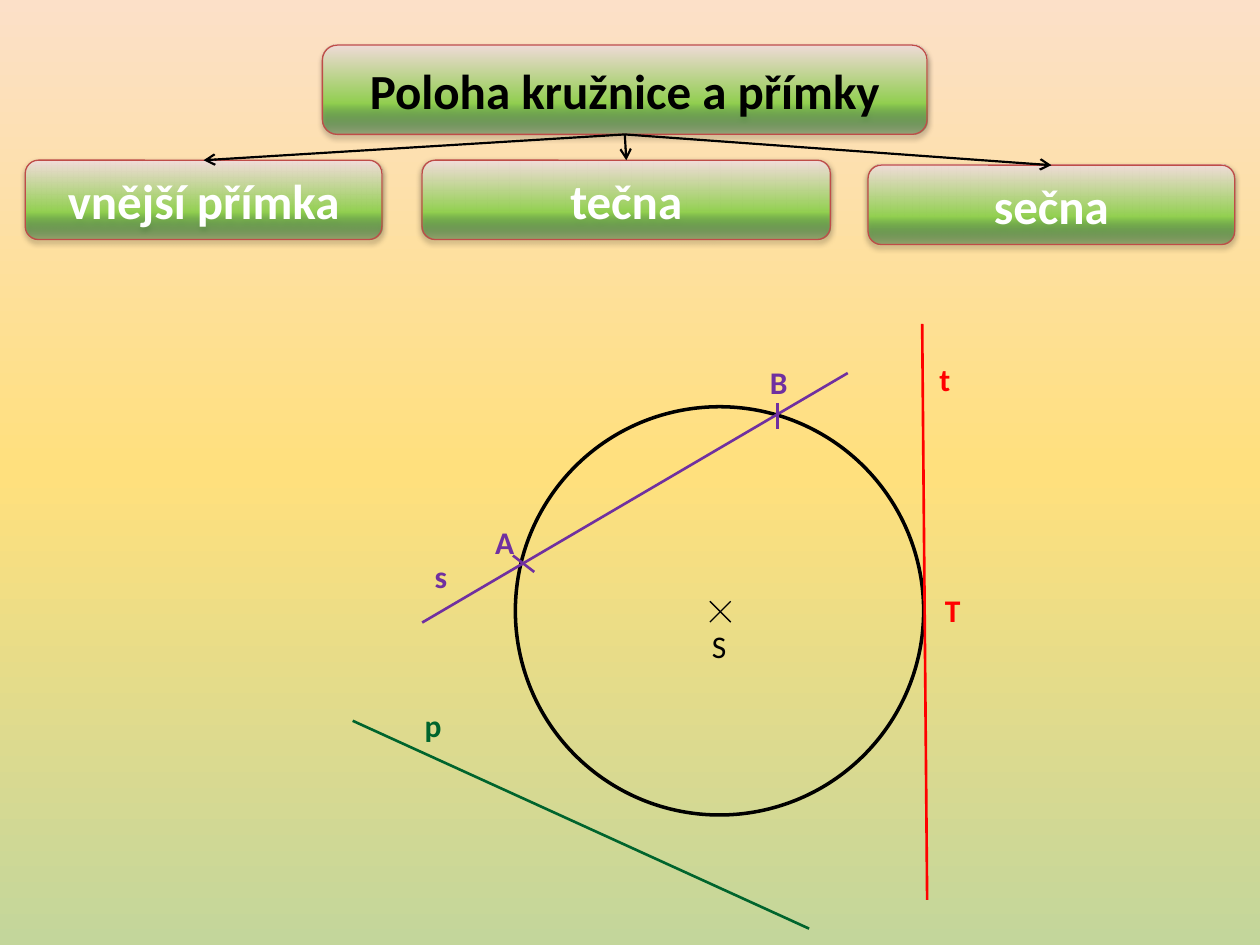
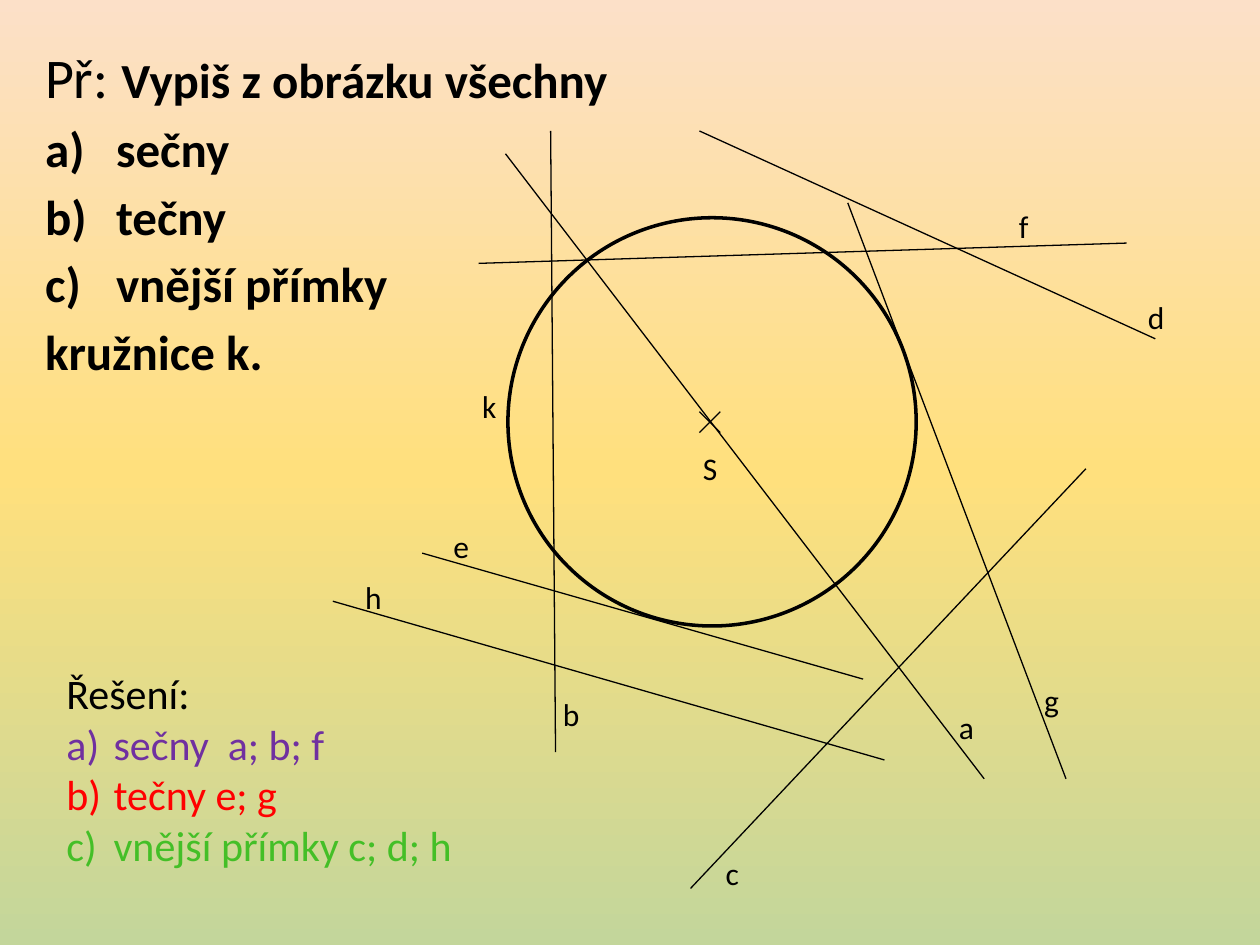
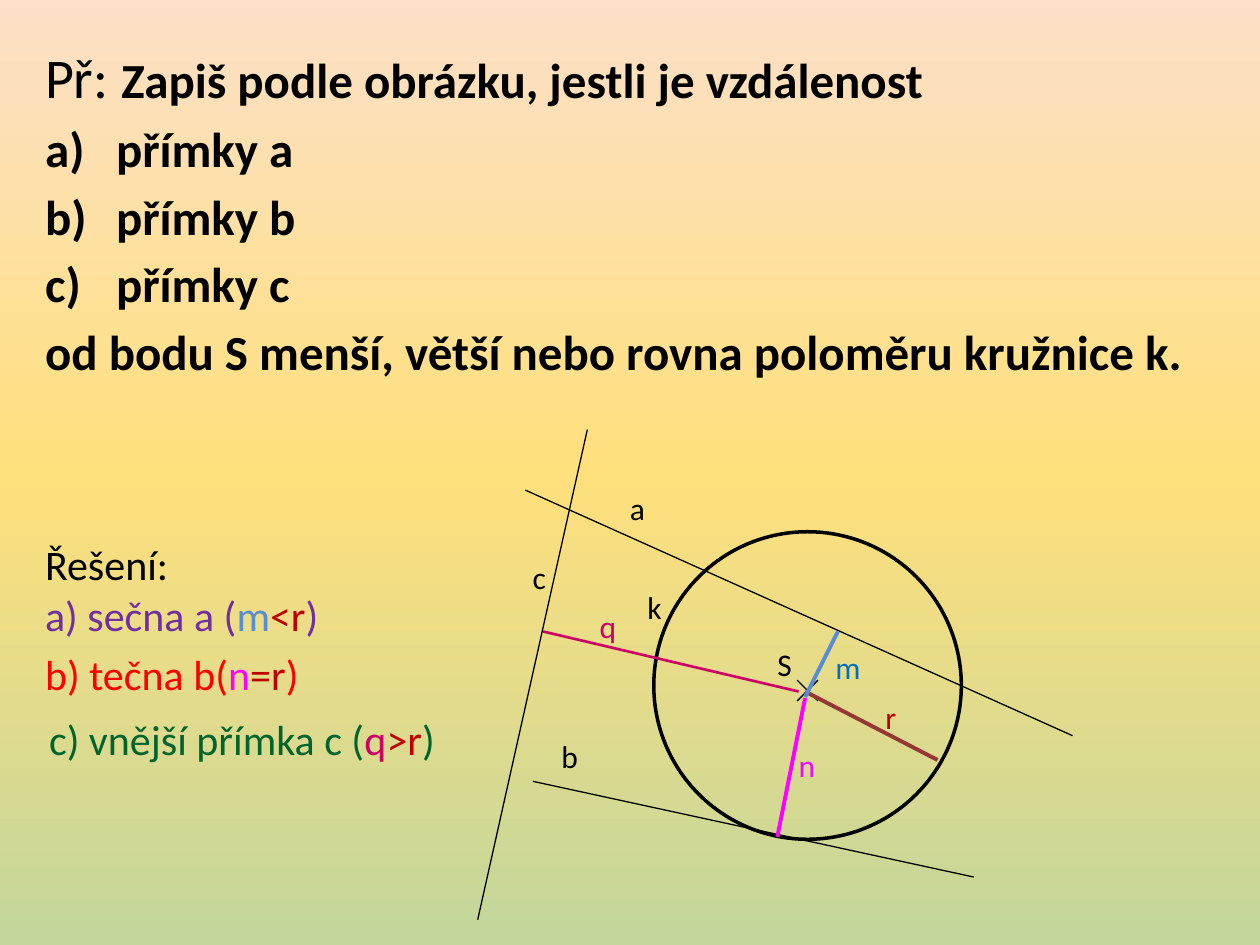
from pptx import Presentation
from pptx import util as u
from pptx.dml.color import RGBColor
from pptx.enum import shapes, text
from pptx.oxml import parse_xml
from pptx.oxml.ns import nsdecls, qn


class Theme:
    font = "Calibri"
    black, white, edge = "000000", "FFFFFF", "BF4C48"
    violet, red, dark_green, lime = "7030A0", "FF0000", "00642D", "44BF27"
    crimson, brown, sky, blue = "C00000", "953735", "558ED5", "0070C0"
    magenta, pink = "FF00FF", "CC0066"
    heading, strong, answer, label = 32, 28, 24, 18
    thin, arrow, medium, circle, thick = 0.75, 1.25, 1.5, 2, 2.25
    page_stops = [(0, "FCE0C8", 100), (50, "FFE07D", 100), (100, "C3D69B", 100)]
    button_stops = [(0, "00642D", 29), (35, "92D050", 100), (100, "F2DCDB", 100)]
    label_height = 1.02
    label_widths = {
        "A": 0.89, "B": 0.89, "S": 0.81, "T": 0.81, "a": 0.81, "b": 0.86, "c": 0.79,
        "d": 0.86, "e": 0.84, "f": 0.71, "g": 0.81, "h": 0.86, "k": 0.84, "m": 1.02,
        "n": 0.86, "p": 0.86, "q": 0.86, "r": 0.74, "s": 0.76, "t": 0.74,
    }


def rgb(code):
    return RGBColor.from_string(code)


def drawing(tag, attributes="", inner=""):
    return parse_xml(f"<a:{tag} {nsdecls('a')} {attributes}>{inner}</a:{tag}>")


def color_xml(code, opacity):
    return f'<a:srgbClr val="{code}"><a:alpha val="{opacity * 1000}"/></a:srgbClr>'


def paint_gradient(fill, holder, stops, angle):
    fill.gradient()
    fill.gradient_angle = angle
    stop_list = next(holder.iter(qn("a:gsLst")))
    stop_list.clear()
    for position, code, opacity in stops:
        stop_list.append(drawing("gs", f'pos="{position * 1000}"', color_xml(code, opacity)))


class Lesson:
    def __init__(self, theme):
        self.theme = theme
        self.deck = Presentation()
        self.deck.slide_width, self.deck.slide_height = u.Cm(25.4), u.Cm(19.05)
        master = self.deck.slide_master
        paint_gradient(master.background.fill, master.element, theme.page_stops, 270)
        self.page = None

    def new_page(self):
        self.page = self.deck.slides.add_slide(self.deck.slide_layouts[6])

    def add_spans(self, para, runs, size, bold=False):
        for words, color in runs:
            span = para.add_run()
            span.text = words
            span.font.name = self.theme.font
            span.font.size = u.Pt(size)
            span.font.bold = bold
            span.font.color.rgb = rgb(color)

    def number(self, para, indent):
        properties = para._p.get_or_add_pPr()
        properties.set("marL", str(u.Cm(indent)))
        properties.set("indent", str(-u.Cm(indent)))
        properties.append(drawing("buFont", 'typeface="+mj-lt"'))
        properties.append(drawing("buAutoNum", 'type="alphaLcParenR"'))

    def text_box(self, spot, lines, size, bold=False, wrap=True):
        box = self.page.shapes.add_textbox(*map(u.Cm, spot))
        frame = box.text_frame
        frame.word_wrap = wrap
        frame.auto_size = text.MSO_AUTO_SIZE.SHAPE_TO_FIT_TEXT
        for index, runs in enumerate(lines):
            para = frame.paragraphs[0] if index == 0 else frame.add_paragraph()
            self.add_spans(para, runs, size, bold)
        return frame.paragraphs

    def label(self, letter, left, top, color=Theme.black, bold=False, width=None):
        spot = (left, top, width or self.theme.label_widths[letter], self.theme.label_height)
        self.text_box(spot, [[(letter, color)]], self.theme.label, bold, wrap=width is not None)

    def exercise(self, task, items, closing):
        black = self.theme.black
        lines = [[("Př: ", black), (task, black)]]
        lines += [[(words, black)] for words in [*items, closing]]
        paras = self.text_box((0.66, 0.74, 24.31, 7.37), lines, self.theme.strong, bold=True)
        opening = paras[0].runs[0].font
        opening.size, opening.bold = u.Pt(self.theme.heading), False
        for para in paras:
            para.space_before = u.Pt(5)
        for para in paras[1:-1]:
            self.number(para, 1.43)

    def button(self, words, spot, color):
        box = self.page.shapes.add_shape(shapes.MSO_SHAPE.ROUNDED_RECTANGLE, *map(u.Cm, spot))
        paint_gradient(box.fill, box.element, self.theme.button_stops, 90)
        box.line.color.rgb = rgb(self.theme.edge)
        box.line.width = u.Pt(self.theme.thin)
        box.shadow.inherit = False
        effects = next(box.element.iter(qn("a:effectLst")))
        effects.append(drawing(
            "outerShdw", 'blurRad="40000" dist="20000" dir="5400000" rotWithShape="0"',
            color_xml("000000", 38)))
        box.text_frame.vertical_anchor = text.MSO_ANCHOR.MIDDLE
        para = box.text_frame.paragraphs[0]
        para.alignment = text.PP_ALIGN.CENTER
        self.add_spans(para, [(words, color)], self.theme.strong, bold=True)
        return box

    def line(self, start, end, color=Theme.black, width=Theme.thin, group=None):
        parent = group or self.page
        connector = parent.shapes.add_connector(
            shapes.MSO_CONNECTOR.STRAIGHT, *map(u.Cm, (*start, *end)))
        connector.line.color.rgb = rgb(color)
        connector.line.width = u.Pt(width)
        connector.element.spPr.append(drawing("effectLst"))
        return connector

    def arrow(self, source, target):
        connector = self.line((0, 0), (1, 1), width=self.theme.arrow)
        connector.begin_connect(source, 2)
        connector.end_connect(target, 0)
        connector.element.spPr.find(qn("a:ln")).append(drawing("tailEnd", 'type="arrow"'))

    def cross(self, x, y, arm=0.21):
        group = self.page.shapes.add_group_shape()
        self.line((x - arm, y - arm), (x + arm, y + arm), group=group)
        self.line((x + arm, y - arm), (x - arm, y + arm), group=group)

    def circle(self, left, top, size):
        ring = self.page.shapes.add_shape(
            shapes.MSO_SHAPE.OVAL, *map(u.Cm, (left, top, size, size)))
        ring.fill.background()
        ring.line.color.rgb = rgb(self.theme.black)
        ring.line.width = u.Pt(self.theme.circle)
        ring.shadow.inherit = False


def positions_page(lesson):
    theme = lesson.theme
    lesson.new_page()
    title = lesson.button("Poloha kružnice a přímky", (6.5, 0.91, 12.19, 1.8), theme.black)
    kinds = [
        ("vnější přímka", (0.51, 3.23, 7.19, 1.6)),
        ("tečna", (8.51, 3.23, 8.23, 1.6)),
        ("sečna", (17.5, 3.33, 7.39, 1.6)),
    ]
    buttons = [lesson.button(words, spot, theme.white) for words, spot in kinds]
    for target in buttons:
        lesson.arrow(title, target)
    lesson.cross(14.52, 12.33)
    lesson.circle(10.39, 8.2, 8.23)
    for start, end, color in [
        ((17.09, 7.52), (8.51, 12.55), theme.violet),
        ((15.67, 8.13), (15.67, 8.64), theme.violet),
        ((10.34, 11.2), (10.77, 11.53), theme.violet),
        ((18.59, 6.53), (18.69, 18.14), theme.red),
        ((7.11, 14.53), (16.31, 18.72), theme.dark_green),
    ]:
        lesson.line(start, end, color, theme.medium)
    lesson.label("S", 14.1, 12.52)
    for letter, left, top, color in [
        ("s", 8.51, 11.1, theme.violet),
        ("p", 8.31, 14.1, theme.dark_green),
        ("A", 9.73, 10.41, theme.violet),
        ("T", 18.8, 11.79, theme.red),
        ("B", 15.27, 7.19, theme.violet),
        ("t", 18.69, 7.14, theme.red),
    ]:
        lesson.label(letter, left, top, color, bold=True)


def listing_page(lesson):
    theme = lesson.theme
    lesson.new_page()
    lesson.exercise("Vypiš z obrázku všechny", ["sečny", "tečny", "vnější přímky"], "kružnice k.")
    lesson.cross(14.31, 8.51)
    lesson.circle(10.24, 4.39, 8.23)
    for letter, start, end, left, top in [
        ("a", (10.19, 3.1), (19.84, 15.7), 19.08, 14.15),
        ("b", (11.1, 2.64), (11.2, 15.16), 11.1, 13.89),
        ("c", (13.92, 17.91), (21.89, 9.45), 14.38, 17.09),
        ("d", (14.1, 2.64), (23.29, 6.83), 22.89, 5.89),
        ("e", (17.4, 13.69), (8.51, 11.15), 8.89, 10.49),
        ("f", (9.65, 5.31), (22.71, 4.9), 20.29, 4.04),
        ("g", (17.09, 4.09), (21.49, 15.7), 20.8, 13.61),
        ("h", (17.83, 15.32), (6.71, 12.12), 7.11, 11.53),
    ]:
        lesson.line(start, end)
        lesson.label(letter, left, top)
    lesson.label("S", 13.92, 8.92)
    lesson.label("k", 9.47, 7.67)
    answers = [
        [("Řešení:", theme.black)],
        [("sečny  a; b; f", theme.violet)],
        [("tečny e; g", theme.red)],
        [("vnější přímky c; d; h", theme.lime)],
    ]
    paras = lesson.text_box((1.09, 13.34, 8.36, 4.37), answers, theme.answer, wrap=False)
    for para in paras[1:]:
        lesson.number(para, 0.95)


def distance_page(lesson):
    theme = lesson.theme
    lesson.new_page()
    lesson.exercise(
        "Zapiš podle obrázku, jestli je vzdálenost",
        ["přímky a", "přímky b", "přímky c"],
        "od bodu S menší, větší nebo rovna poloměru kružnice k.")
    lesson.cross(16.28, 13.92)
    lesson.circle(13.18, 10.72, 6.2)
    for start, end in [
        ((10.59, 9.88), (21.62, 14.83)),
        ((19.63, 17.68), (10.74, 15.75)),
        ((11.84, 8.66), (9.63, 18.54)),
    ]:
        lesson.line(start, end)
    lesson.label("c", 10.49, 11.13, width=1.14)
    for letter, left, top in [
        ("a", 12.45, 9.73), ("b", 11.07, 14.73), ("S", 15.42, 12.88), ("k", 12.8, 11.73),
    ]:
        lesson.label(letter, left, top)
    for start, end, color, width in [
        ((16.23, 13.94), (18.9, 15.32), theme.brown, theme.thick),
        ((16.23, 14.05), (16.89, 12.73), theme.sky, theme.thick),
        ((16.23, 14.07), (15.67, 16.87), theme.magenta, theme.thick),
        ((16.1, 13.94), (10.95, 12.73), theme.pink, theme.medium),
    ]:
        lesson.line(start, end, color, width)
    for letter, left, top, color in [
        ("r", 17.6, 13.94, theme.crimson),
        ("m", 16.59, 12.93, theme.blue),
        ("n", 15.85, 14.91, theme.magenta),
        ("q", 11.84, 12.12, theme.pink),
    ]:
        lesson.label(letter, left, top, color)

    def comparison(words, color, distance, distance_color, sign):
        return [(words, color), (distance, distance_color), (f"{sign}r", theme.crimson), (")", color)]

    secant = comparison("a) sečna a (", theme.violet, "m", theme.sky, "<")
    tangent = comparison("b) tečna b(", theme.red, "n", theme.magenta, "=")
    outer = comparison("c) vnější přímka c (", theme.dark_green, "q", theme.pink, ">")
    solution = [("Řešení:", theme.black)]
    lesson.text_box((0.66, 10.74, 8.99, 2.31), [solution, secant], theme.answer)
    lesson.text_box((0.74, 14.25, 8.86, 1.27), [outer], theme.answer)
    lesson.text_box((0.66, 12.95, 5.66, 1.27), [tangent], theme.answer, wrap=False)


def main():
    lesson = Lesson(Theme())
    positions_page(lesson)
    listing_page(lesson)
    distance_page(lesson)
    lesson.deck.save("out.pptx")


if __name__ == "__main__":
    main()
